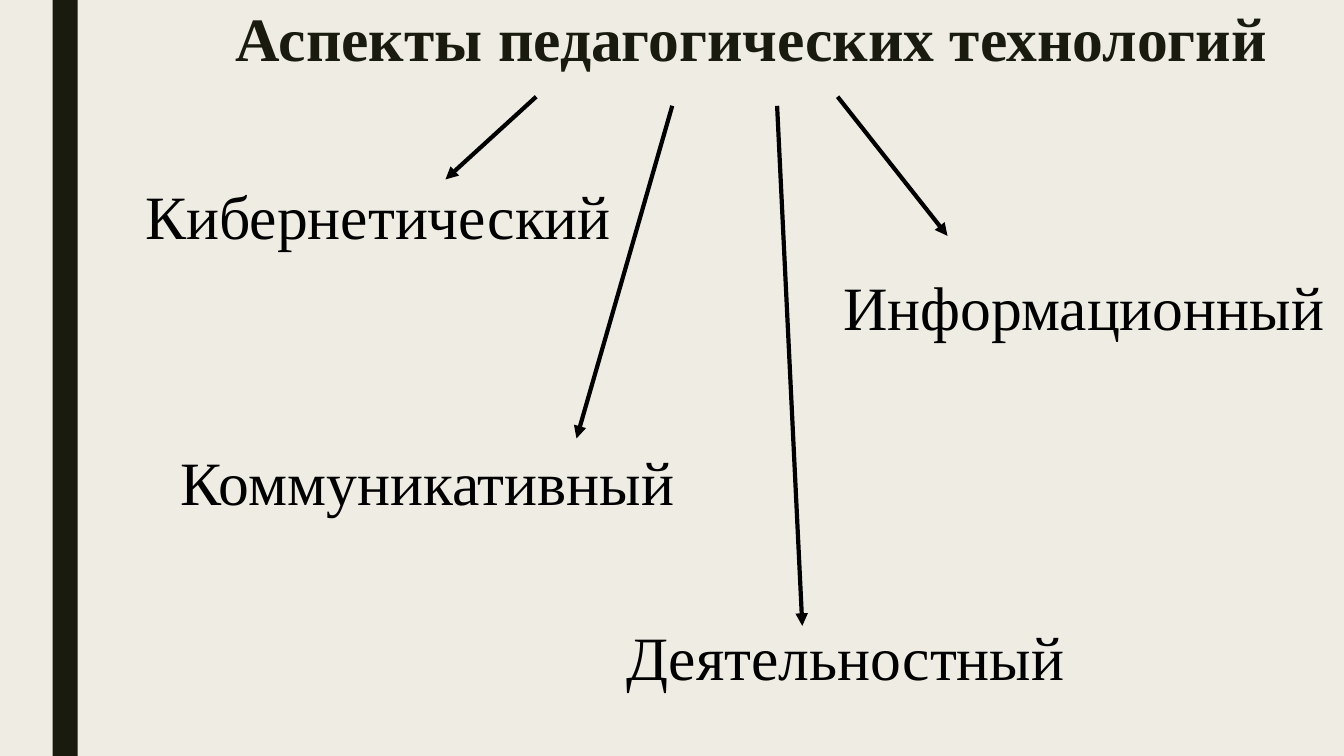
import pptx
import pptx.dml.color
import pptx.enum.shapes
import pptx.enum.text
import pptx.oxml.ns
import pptx.util
from lxml import etree

Pt = pptx.util.Pt
qn = pptx.oxml.ns.qn

CREAM = pptx.dml.color.RGBColor(0xEF, 0xED, 0xE3)
DARK = pptx.dml.color.RGBColor(0x19, 0x1B, 0x0E)
BLACK = pptx.dml.color.RGBColor(0, 0, 0)

# Name, left indent, space before
ASPECTS = [
    ("Кибернетический", 18, 0),
    ("Информационный", 516.5, 12),
    ("Коммуникативный", 43.5, 72),
    ("Деятельностный", 361.5, 72),
]

# Start x, start y, end x, end y
ARROWS = [
    (598.3, 69.1, 676.8, 168.5),
    (383, 69.1, 318.2, 128.2),
    (480.2, 75.6, 411.8, 313.2),
    (555.1, 75.6, 573.1, 447.1),
]


class AspectSlide:
    font_name = "Times New Roman"
    font_size = Pt(44)
    arrow_width = Pt(3)

    def __init__(self, deck):
        self.page = deck.slides.add_slide(deck.slide_layouts[1])
        background = self.page.background.fill
        background.solid()
        background.fore_color.rgb = CREAM

    def bar(self, left, top, width, height):
        shape = self.page.shapes.add_shape(
            pptx.enum.shapes.MSO_SHAPE.RECTANGLE,
            Pt(left), Pt(top), Pt(width), Pt(height))
        shape.shadow.inherit = False
        shape.fill.solid()
        shape.fill.fore_color.rgb = DARK
        shape.line.fill.background()

    def place(self, box, left, top, width, height):
        """Move a placeholder and make its text start at the top left."""
        box.left, box.top = Pt(left), Pt(top)
        box.width, box.height = Pt(width), Pt(height)
        frame = box.text_frame
        frame.word_wrap = True
        frame.auto_size = pptx.enum.text.MSO_AUTO_SIZE.NONE
        frame.vertical_anchor = pptx.enum.text.MSO_ANCHOR.TOP
        return frame

    def style(self, para, color, bold, line_spacing):
        para.line_spacing = line_spacing
        for span in para.runs:
            span.font.name = self.font_name
            span.font.size = self.font_size
            span.font.bold = bold
            span.font.color.rgb = color

    def title(self, text, *bounds):
        frame = self.place(self.page.shapes.title, *bounds)
        frame.text = text
        para = frame.paragraphs[0]
        para.alignment = pptx.enum.text.PP_ALIGN.LEFT
        self.style(para, DARK, True, 0.95)

    def body(self, items, *bounds):
        frame = self.place(self.page.placeholders[1], *bounds)
        frame.text = "\n".join(name for name, _, _ in items)
        for para, (_, indent, gap) in zip(frame.paragraphs, items):
            properties = para._p.get_or_add_pPr()
            properties.set("marL", str(Pt(indent)))
            properties.set("indent", "0")
            etree.SubElement(properties, qn("a:buNone"))
            para.alignment = pptx.enum.text.PP_ALIGN.JUSTIFY
            para.space_before = Pt(gap)
            para.space_after = Pt(0)
            self.style(para, BLACK, False, 1.0)

    def arrow(self, *ends):
        connector = self.page.shapes.add_connector(
            pptx.enum.shapes.MSO_CONNECTOR.STRAIGHT, *map(Pt, ends))
        connector.line.color.rgb = BLACK
        connector.line.width = self.arrow_width
        properties = connector._element.spPr
        etree.SubElement(properties.find(qn("a:ln")), qn("a:tailEnd"), type="triangle")
        etree.SubElement(properties, qn("a:effectLst"))


def main():
    deck = pptx.Presentation()
    deck.slide_width, deck.slide_height = Pt(960), Pt(540)
    slide = AspectSlide(deck)
    slide.bar(37.5, 0, 18, 540)
    slide.title("Аспекты педагогических технологий", 161.3, 0, 756, 116.6)
    slide.body(ASPECTS, 78.5, 123.8, 882, 405.4)
    for ends in ARROWS:
        slide.arrow(*ends)
    deck.save("out.pptx")


if __name__ == "__main__":
    main()
